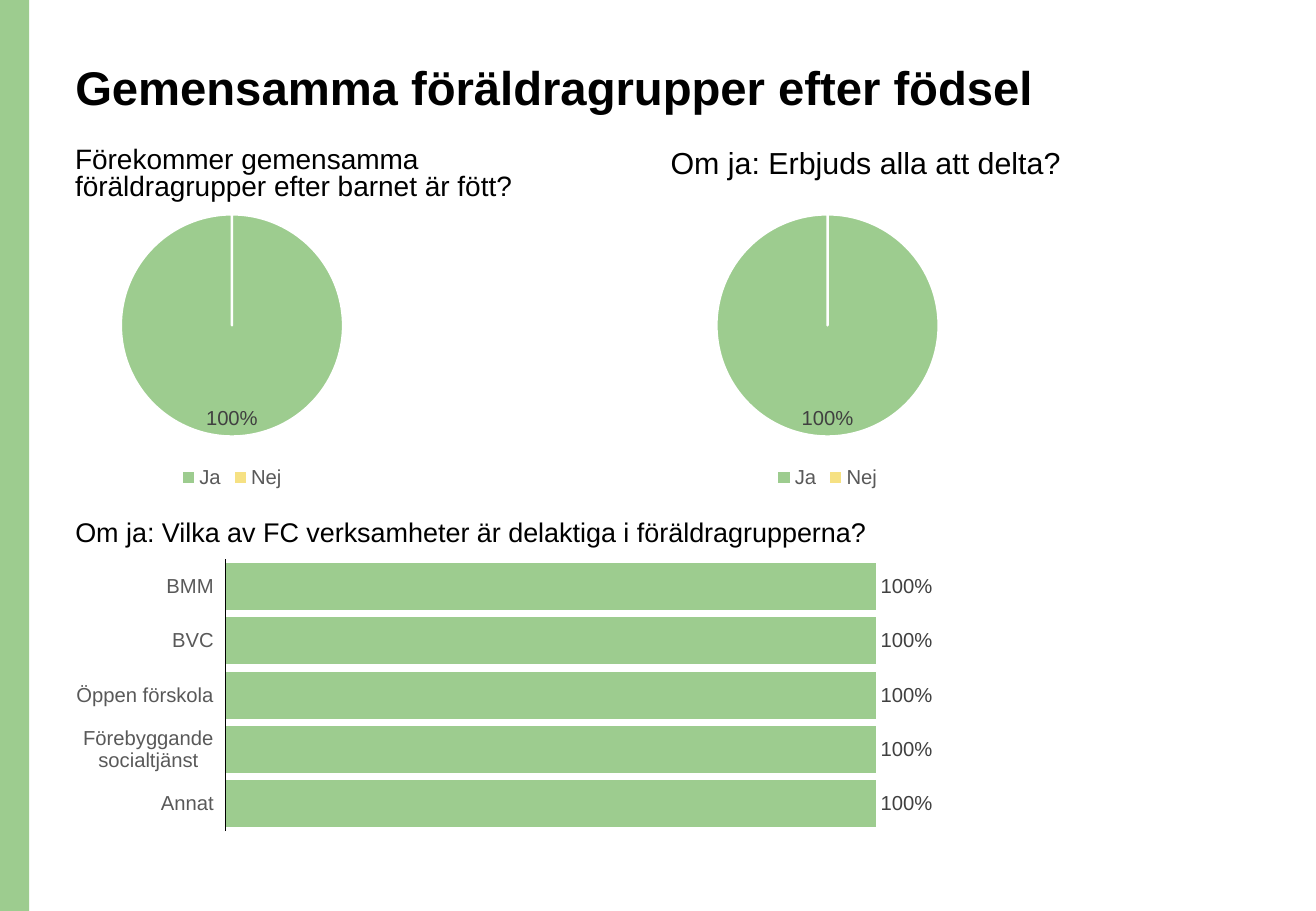
"""Build a slide on joint parent groups after birth, with two pies and a bar chart."""
from lxml import etree
from pptx import Presentation
from pptx.chart.data import CategoryChartData
from pptx.dml.color import RGBColor
from pptx.enum.chart import XL_CHART_TYPE, XL_LABEL_POSITION, XL_LEGEND_POSITION, XL_TICK_LABEL_POSITION, XL_TICK_MARK
from pptx.enum.shapes import MSO_SHAPE
from pptx.enum.text import MSO_ANCHOR, MSO_AUTO_SIZE, PP_ALIGN
from pptx.oxml.ns import qn
from pptx.util import Cm, Pt

PIE, BAR = XL_CHART_TYPE.PIE, XL_CHART_TYPE.BAR_CLUSTERED
INSIDE_END, OUTSIDE_END = XL_LABEL_POSITION.INSIDE_END, XL_LABEL_POSITION.OUTSIDE_END
BOTTOM = XL_LEGEND_POSITION.BOTTOM
NO_TICK, LOW = XL_TICK_MARK.NONE, XL_TICK_LABEL_POSITION.LOW
RECTANGLE = MSO_SHAPE.RECTANGLE
TOP, LEFT, NO_FIT = MSO_ANCHOR.TOP, PP_ALIGN.LEFT, MSO_AUTO_SIZE.NONE

FONT = "Arial"
GREEN, YELLOW, WHITE, BLACK = "9DCC8F", "F6E183", "FFFFFF", "000000"
AXIS_GREY, LABEL_GREY = "595959", "404040"
LEFT_COLUMN, RIGHT_COLUMN = 1.32, 13.77


def style_font(font, size, color):
    font.name, font.size = FONT, Pt(size)
    font.color.rgb = RGBColor.from_string(color)


def add_percent_chart(kind, box, categories, values, plot_box, label_position):
    chart_data = CategoryChartData(number_format="0%")
    chart_data.categories = categories
    chart_data.add_series("Series 1", values)
    chart = slide.shapes.add_chart(kind, *map(Cm, box), chart_data).chart
    chart.has_title = chart.has_legend = False
    style_font(chart.font, 10, BLACK)

    plot = chart.plots[0]
    plot.has_data_labels = True
    labels = plot.data_labels
    labels.show_value = True
    labels.number_format, labels.number_format_is_linked = "0%;;", False
    labels.position = label_position
    style_font(labels.font, 12, LABEL_GREY)

    plot_area = chart._chartSpace.chart.plotArea
    for old_layout in plot_area.findall(qn("c:layout")):
        plot_area.remove(old_layout)
    layout = etree.Element(qn("c:layout"))
    manual = etree.SubElement(layout, qn("c:manualLayout"))
    settings = [("layoutTarget", "inner"), ("xMode", "edge"), ("yMode", "edge")]
    for tag, value in settings + list(zip("xywh", plot_box)):
        etree.SubElement(manual, qn(f"c:{tag}")).set("val", str(value))
    plot_area.insert(0, layout)
    return chart


presentation = Presentation()
presentation.slide_width, presentation.slide_height = Cm(27.51), Cm(19.05)
slide = presentation.slides.add_slide(presentation.slide_layouts[1])

side_band = slide.shapes.add_shape(RECTANGLE, 0, 0, Cm(0.61), presentation.slide_height)
side_band.shadow.inherit = False
side_band.fill.solid()
side_band.fill.fore_color.rgb = RGBColor.from_string(GREEN)
side_band.line.fill.background()

title, groups_question = slide.shapes.title, slide.placeholders[1]
occurrence_question, offer_question = [slide.shapes.add_textbox(0, 0, 0, 0) for _ in range(2)]
headings = [
    (title, (LEFT_COLUMN, 1.22, 23.72, 2.59), "Gemensamma föräldragrupper efter födsel", 28, 0.9),
    (occurrence_question, (LEFT_COLUMN, 2.97, 10.49, 1.45),
     "Förekommer gemensamma föräldragrupper efter barnet är fött?", 16.6, 0.8),
    (offer_question, (RIGHT_COLUMN, 2.97, 10.49, 1.45), "Om ja: Erbjuds alla att delta?", 18, 0.9),
    (groups_question, (LEFT_COLUMN, 10.74, 20.65, 1.6),
     "Om ja: Vilka av FC verksamheter är delaktiga i föräldragrupperna?", 16, 0.9),
]
for heading, box, wording, size, spacing in headings:
    heading.left, heading.top, heading.width, heading.height = map(Cm, box)
    frame = heading.text_frame
    frame.word_wrap, frame.auto_size, frame.vertical_anchor = True, NO_FIT, TOP
    paragraph = frame.paragraphs[0]
    properties = paragraph._p.get_or_add_pPr()
    properties.set("marL", "0")
    properties.set("indent", "0")
    etree.SubElement(properties, qn("a:buNone"))
    paragraph.alignment, paragraph.line_spacing, paragraph.space_before = LEFT, spacing, Pt(0)
    run = paragraph.add_run()
    run.text = wording
    run.font.bold = heading is title
    style_font(run.font, size, BLACK)

for column in (LEFT_COLUMN, RIGHT_COLUMN):
    answer_pie = add_percent_chart(PIE, (column, 4.11, 7.06, 6.2), ["Ja", "Nej"], [1, 0],
                                   (0.17, 0.06, 0.66, 0.75), INSIDE_END)
    answer_pie.has_legend = True
    answer_pie.legend.position = BOTTOM
    answer_pie.legend.include_in_layout = False
    style_font(answer_pie.legend.font, 12, AXIS_GREY)
    for index, color in enumerate((GREEN, YELLOW)):
        slice_format = answer_pie.series[0].points[index].format
        slice_format.fill.solid()
        slice_format.fill.fore_color.rgb = RGBColor.from_string(color)
        slice_format.line.color.rgb = RGBColor.from_string(WHITE)
        slice_format.line.width = Pt(1.5)

services = ["BMM", "BVC", "Öppen förskola", "Förebyggande socialtjänst", "Annat"]
service_bars = add_percent_chart(BAR, (LEFT_COLUMN, 11.58, 19.99, 5.92), services, [1] * len(services),
                                 (0.17, 0.02, 0.68, 0.96), OUTSIDE_END)
service_bars.plots[0].gap_width = 15
service_bars.plots[0].vary_by_categories = False
bar_fill = service_bars.series[0].format.fill
bar_fill.solid()
bar_fill.fore_color.rgb = RGBColor.from_string(GREEN)

service_axis, share_axis = service_bars.category_axis, service_bars.value_axis
service_axis.reverse_order = True
service_axis.major_tick_mark = service_axis.minor_tick_mark = NO_TICK
service_axis.tick_label_position = LOW
service_axis.format.line.color.rgb = RGBColor.from_string(BLACK)
service_axis.format.line.width = Pt(0.75)
style_font(service_axis.tick_labels.font, 12, AXIS_GREY)
share_axis.minimum_scale, share_axis.maximum_scale = 0, 1
share_axis.has_major_gridlines = False
share_axis.visible = False

presentation.save("out.pptx")
